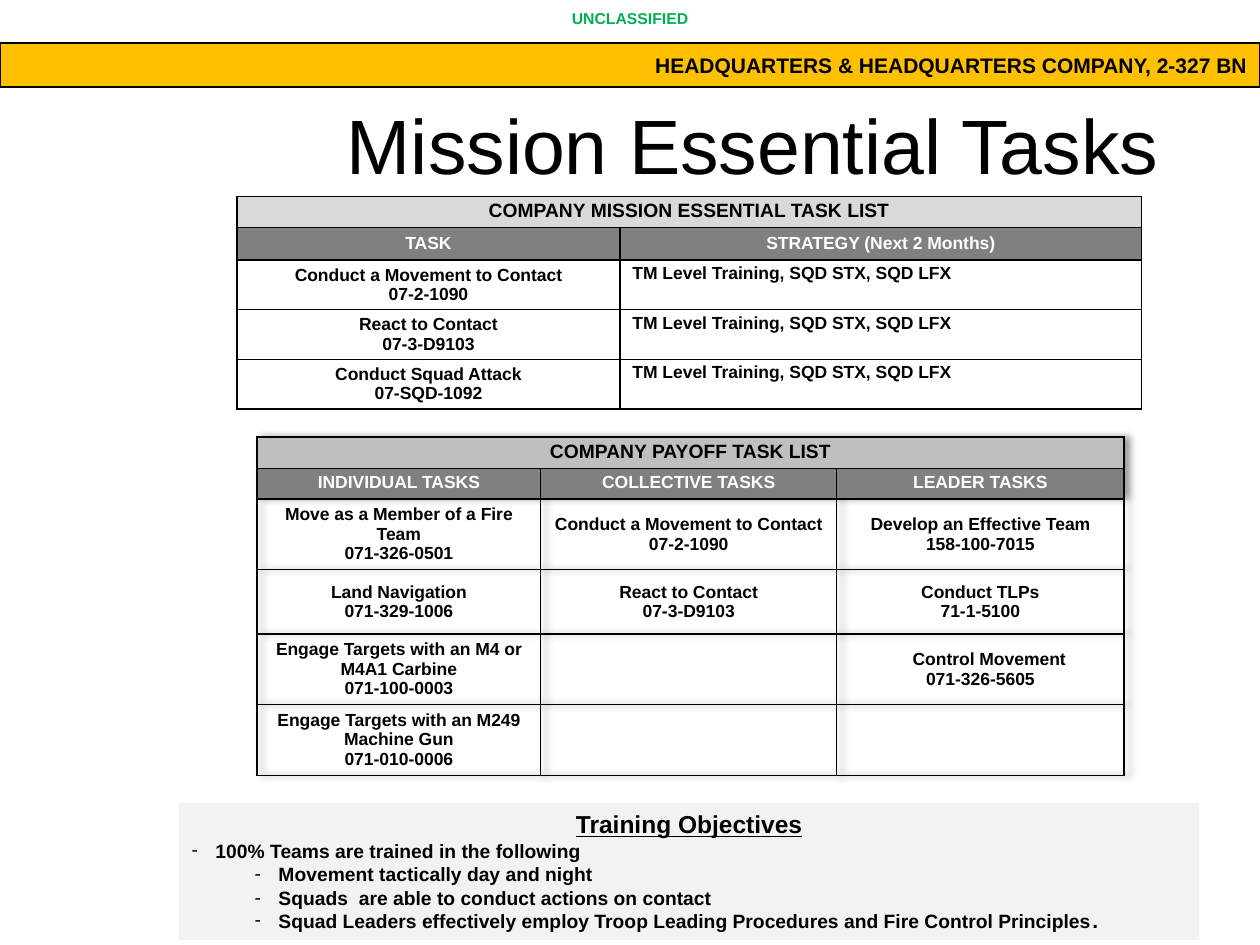
import pptx
import pptx.util
import pptx.dml.color
import pptx.enum.shapes
import pptx.enum.text
import pptx.oxml
import pptx.oxml.ns
from dataclasses import dataclass
from lxml import etree

Inches, Pt = pptx.util.Inches, pptx.util.Pt
ALIGN = pptx.enum.text.PP_ALIGN
ANCHOR = pptx.enum.text.MSO_ANCHOR
A_NS = pptx.oxml.ns.nsdecls("a")


@dataclass(frozen=True)
class Theme:
    font: str = "Arial"
    black: str = "000000"
    white: str = "FFFFFF"
    green: str = "00B050"
    gold: str = "FFC000"
    header: str = "808080"
    panel: str = "F2F2F2"
    marking_size: int = 9
    cell_size: int = 10
    heading_size: int = 11
    banner_size: int = 12
    objectives_size: int = 14
    title_size: int = 44


THEME = Theme()

MARKING = "UNCLASSIFIED"
BANNER = "HEADQUARTERS & HEADQUARTERS COMPANY, 2-327 BN"
TITLE = "Mission Essential Tasks"
STRATEGY = "TM Level Training, SQD STX, SQD LFX"

MISSION_TABLE = {
    "at": (1.88, 1.56), "cols": [3.04, 4.14], "rows": [0.23, 0.26, 0.26, 0.26, 0.26],
    "heading": "COMPANY MISSION ESSENTIAL TASK LIST", "heading_fill": "D9D9D9",
    "header": ["TASK", "STRATEGY (Next 2 Months)"],
    "body": [
        ["Conduct a Movement to Contact\n07-2-1090", STRATEGY],
        ["React to Contact\n07-3-D9103", STRATEGY],
        ["Conduct Squad Attack\n07-SQD-1092", STRATEGY],
    ],
    "body_fill": THEME.white, "header_anchor": ANCHOR.MIDDLE, "left_cols": {1},
    "shadow": False,
}
PAYOFF_TABLE = {
    "at": (2.04, 3.47), "cols": [2.25, 2.35, 2.28],
    "rows": [0.25, 0.24, 0.51, 0.51, 0.51, 0.51],
    "heading": "COMPANY PAYOFF TASK LIST", "heading_fill": "BFBFBF",
    "header": ["INDIVIDUAL TASKS", "COLLECTIVE TASKS", "LEADER TASKS"],
    "body": [
        ["Move as a Member of a Fire Team\n071-326-0501",
         "Conduct a Movement to Contact\n07-2-1090",
         "Develop an Effective Team\n158-100-7015"],
        ["Land Navigation\n071-329-1006", "React to Contact\n07-3-D9103",
         "Conduct TLPs\n71-1-5100"],
        ["Engage Targets with an M4 or M4A1 Carbine\n071-100-0003", "",
         "Control Movement\n071-326-5605"],
        ["Engage Targets with an M249 Machine Gun\n071-010-0006", "", ""],
    ],
    "body_fill": None, "header_anchor": ANCHOR.TOP, "left_cols": set(),
    "shadow": True,
}
FIRST_LINE_INDENTS = {"Control Movement": 0.14}

OBJECTIVES_TITLE = "Training Objectives"
OBJECTIVES = [  # level, runs with their sizes
    (0, [("100% Teams are trained in the following", 11)]),
    (1, [("Movement tactically day and night", 11)]),
    (1, [("Squads  are able to conduct actions on contact", 11)]),
    (1, [("Squad Leaders effectively employ Troop Leading Procedures and "
          "Fire Control Principles", 11), (".", 12)]),
]


def rgb(value):
    return pptx.dml.color.RGBColor.from_string(value)


def box(*lengths):
    return [Inches(v) for v in lengths]


def style(p, size, color=THEME.black, bold=True, align=ALIGN.CENTER):
    p.alignment = align
    p.font.name, p.font.size, p.font.bold = THEME.font, Pt(size), bold
    p.font.color.rgb = rgb(color)


def set_border(cell):
    tc_pr = cell._tc.get_or_add_tcPr()
    for i, side in enumerate(("lnL", "lnR", "lnT", "lnB")):
        tc_pr.insert(i, etree.fromstring(
            f'<a:{side} {A_NS} w="{Pt(1)}"><a:solidFill>'
            f'<a:srgbClr val="{THEME.black}"/></a:solidFill></a:{side}>'))


def fill_cell(cell, text, fill, size=THEME.cell_size, color=THEME.black,
              align=ALIGN.CENTER, anchor=ANCHOR.MIDDLE):
    cell.margin_left = cell.margin_right = Inches(0.1)
    cell.margin_top = cell.margin_bottom = Inches(0.03)
    cell.vertical_anchor = anchor
    cell.text = text
    for p in cell.text_frame.paragraphs:
        if p.text in FIRST_LINE_INDENTS:
            p._p.get_or_add_pPr().set("marL", str(Inches(FIRST_LINE_INDENTS[p.text])))
        style(p, size, color, align=align)
    if fill:
        cell.fill.solid()
        cell.fill.fore_color.rgb = rgb(fill)
    else:
        cell.fill.background()
    set_border(cell)


def add_task_table(s, data):
    cols, rows = data["cols"], data["rows"]
    table = s.shapes.add_table(len(rows), len(cols), *box(
        *data["at"], sum(cols), sum(rows))).table
    table.first_row = table.horz_banding = False
    for column, width in zip(table.columns, cols):
        column.width = Inches(width)
    for row, height in zip(table.rows, rows):
        row.height = Inches(height)

    table.cell(0, 0).merge(table.cell(0, len(cols) - 1))
    for c, label in enumerate(data["header"]):
        fill_cell(table.cell(0, c), "" if c else data["heading"], data["heading_fill"],
                  size=THEME.heading_size, anchor=ANCHOR.TOP)
        fill_cell(table.cell(1, c), label, THEME.header, color=THEME.white,
                  anchor=data["header_anchor"])
    for r, texts in enumerate(data["body"], start=2):
        for c, text in enumerate(texts):
            left = c in data["left_cols"]
            fill_cell(table.cell(r, c), text, data["body_fill"],
                      align=ALIGN.LEFT if left else ALIGN.CENTER,
                      anchor=ANCHOR.TOP if left else ANCHOR.MIDDLE)
    if data["shadow"]:
        table._tbl.tblPr.insert(0, etree.fromstring(
            f'<a:effectLst {A_NS}><a:outerShdw blurRad="{Pt(4)}" dist="{Pt(3)}" dir="0">'
            f'<a:srgbClr val="{THEME.black}"><a:alpha val="40000"/></a:srgbClr>'
            '</a:outerShdw></a:effectLst>'))


def add_marking_and_banner(s):
    marking = s.shapes.add_textbox(*box(1.25, 0.02, 7.5, 0.25)).text_frame
    marking.word_wrap = True
    marking.text = MARKING
    style(marking.paragraphs[0], THEME.marking_size, THEME.green)

    banner = s.shapes.add_shape(pptx.enum.shapes.MSO_SHAPE.RECTANGLE,
                                *box(0, 0.34, 10, 0.35))
    banner.shadow.inherit = False
    banner.fill.solid()
    banner.fill.fore_color.rgb = rgb(THEME.gold)
    banner.line.color.rgb = rgb(THEME.black)
    banner.line.width = Pt(1)
    tf = banner.text_frame
    tf.vertical_anchor = ANCHOR.MIDDLE
    tf.text = BANNER
    style(tf.paragraphs[0], THEME.banner_size, align=ALIGN.RIGHT)


def place(sp, *lengths):
    sp.left, sp.top, sp.width, sp.height = box(*lengths)


def fill_title(sp):
    place(sp, 0.68, 0.46, 8.62, 1.45)
    tf = sp.text_frame
    tf.vertical_anchor = ANCHOR.MIDDLE
    tf.text = TITLE
    p = tf.paragraphs[0]
    p.line_spacing = 0.9
    style(p, THEME.title_size, bold=False, align=ALIGN.RIGHT)


def fill_objectives(sp):
    place(sp, 1.42, 6.37, 8.1, 1.09)
    sp.fill.solid()
    sp.fill.fore_color.rgb = rgb(THEME.panel)
    tf = sp.text_frame
    tf.auto_size = pptx.enum.text.MSO_AUTO_SIZE.NONE
    tf.vertical_anchor = ANCHOR.TOP
    p = tf.paragraphs[0]
    p.text = OBJECTIVES_TITLE
    p.space_before = Pt(0)
    p_pr = p._p.get_or_add_pPr()
    p_pr.set("marL", "0")
    p_pr.set("indent", "0")
    etree.SubElement(p_pr, pptx.oxml.ns.qn("a:buNone"))
    style(p, THEME.objectives_size)
    p.font.underline = True

    for level, runs in OBJECTIVES:
        p = tf.add_paragraph()
        p.level = level
        p.space_before = Pt(0)
        p.line_spacing = Pt(13.5)
        p_pr = p._p.get_or_add_pPr()
        p_pr.set("marL", str(Inches(0.19 + 0.5 * level)))
        p_pr.set("indent", str(Inches(-0.19)))
        etree.SubElement(p_pr, pptx.oxml.ns.qn("a:buChar"), char="-")
        style(p, runs[0][1], align=ALIGN.LEFT)
        for text, size in runs:
            r = p.add_run()
            r.text = text
            r.font.size = Pt(size)


def main():
    prs = pptx.Presentation()
    prs.slide_width, prs.slide_height = box(10, 7.5)
    s = prs.slides.add_slide(prs.slide_layouts[1])
    add_marking_and_banner(s)
    fill_title(s.shapes.title)
    for data in (MISSION_TABLE, PAYOFF_TABLE):
        add_task_table(s, data)
    fill_objectives(s.placeholders[1])
    prs.save("out.pptx")


if __name__ == "__main__":
    main()
